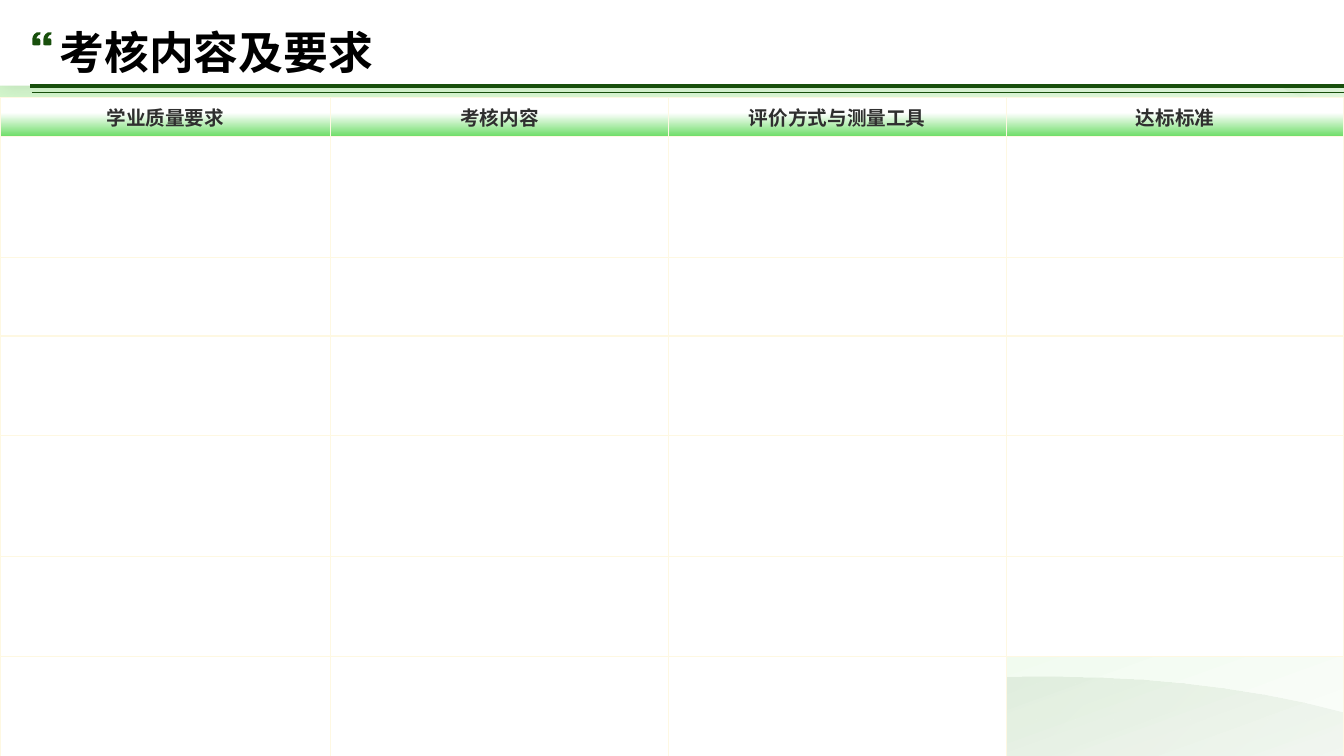
from collections import namedtuple
from itertools import product

from lxml.etree import SubElement
from pptx import Presentation
from pptx.dml.color import RGBColor
from pptx.enum.shapes import MSO_CONNECTOR, MSO_SHAPE
from pptx.enum.text import MSO_ANCHOR, MSO_AUTO_SIZE, PP_ALIGN
from pptx.oxml.ns import qn
from pptx.util import Inches, Pt

Box = namedtuple("Box", "left top width height")
PAGE = Box(0, 0, 13.33, 7.5)
HEADER = Box(0, 0, 13.33, 0.85)
CRITERIA = Box(0, 0.97, 13.33, 6.53)
CJK_FONT = "Noto Sans CJK SC"
DARK_GREEN = "184F0C"
HEADINGS = ["学业质量要求", "考核内容", "评价方式与测量工具", "达标标准"]
COLUMN_WIDTHS = [3.28, 3.35, 3.35, 3.35]
ROW_HEIGHTS = [0.38, 1.2, 0.78, 0.99, 1.2, 0.99, 0.99]
WAVE = [(0, 6.63), (0.09, 6.67), (4.29, 8.08, 8.7, 6.02, 12.93, 6.97),
        (13.33, 7.07), (13.33, 7.5), (0, 7.5)]
CORNER = [(13.33, 0), (13.33, 0.99), (13.26, 1), (12.89, 1.03, 12.53, 0.82, 12.38, 0.46),
          (12.34, 0.35, 12.32, 0.24, 12.32, 0.13), (12.34, 0)]
QUOTE = [(0.06, 0.13), (0.02, 0.13), (0.01, 0.13, 0, 0.13, 0, 0.12), (0, 0.07),
         (0, 0.05, 0.01, 0.03, 0.02, 0.02), (0.03, 0, 0.05, 0, 0.08, 0), (0.08, 0.02),
         (0.06, 0.02, 0.05, 0.04, 0.04, 0.06), (0.06, 0.06), (0.07, 0.06, 0.08, 0.07, 0.08, 0.08),
         (0.08, 0.12), (0.08, 0.13, 0.07, 0.13, 0.06, 0.13)]


def color(value):
    """Turn a hex string into a colour."""
    return RGBColor.from_string(value)


def add_color(parent, value, opacity=100):
    """Add a colour element with its opacity in percent."""
    swatch = SubElement(parent, qn("a:srgbClr"), val=value)
    if opacity < 100:
        SubElement(swatch, qn("a:alpha"), val=str(opacity * 1000))


def paint_gradient(fill, properties, stops, angle):
    """Fill with a linear gradient of (position, colour, opacity) stops."""
    fill.solid()
    solid = properties.find(qn("a:solidFill"))
    gradient = solid.makeelement(qn("a:gradFill"), {"rotWithShape": "1"})
    stop_list = SubElement(gradient, qn("a:gsLst"))
    for position, *shade in stops:
        add_color(SubElement(stop_list, qn("a:gs"), pos=str(position * 1000)), *shade)
    SubElement(gradient, qn("a:lin"), ang=str(angle * 60000), scaled="0")
    properties.replace(solid, gradient)


def place_contour(contour, left, top):
    """Shift a contour and give its segments as lists of points in EMU."""
    return [[(Inches(left + x), Inches(top + y)) for x, y in zip(segment[::2], segment[1::2])]
            for segment in contour]


def add_outline(slide, contours):
    """Draw closed contours of corners and cubic curves as one shape."""
    builder = slide.shapes.build_freeform(*contours[0][0][-1])
    for number, (start, *segments) in enumerate(contours):
        if number:
            builder.move_to(*start[-1])
        builder.add_line_segments([segment[-1] for segment in segments], close=True)
    outline = builder.convert_to_shape()
    outline.shadow.inherit = False
    outline.line.fill.background()
    segments = [segment for contour in contours for segment in contour[1:]]
    for corner, segment in zip(list(outline.element.iter(qn("a:lnTo"))), segments):
        if len(segment) == 3:
            curve = corner.makeelement(qn("a:cubicBezTo"), {})
            for x, y in segment:
                SubElement(curve, qn("a:pt"), x=str(x - outline.left), y=str(y - outline.top))
            corner.getparent().replace(corner, curve)
    return outline


def add_panel(slide, box):
    """Add a plain rectangle over the box."""
    panel = slide.shapes.add_shape(MSO_SHAPE.RECTANGLE, *map(Inches, box))
    panel.shadow.inherit = False
    panel.line.fill.background()
    return panel


def add_backdrop(slide, box):
    """Paint the background, its veils, the wave and the corner."""
    background = slide.background.fill
    background.solid()
    paint_gradient(background, next(slide.element.iter(qn("p:bgPr"))),
                   [(48, "FFFFFF"), (100, "E0F9DB")], 90)
    wave, corner = (place_contour(contour, box.left, box.top) for contour in (WAVE, CORNER))
    layers = [
        (add_panel(slide, box), [(0, "F9FEF8", 80), (100, "E0F9DB", 78)], 90),
        (add_outline(slide, [wave]), [(0, "133F0A"), (100, "237312", 65)], 45),
        (add_outline(slide, [corner]),
         [(0, "237312"), (41, "34AA1A", 47), (82, "34AA1A", 0)], 45),
        (add_panel(slide, box), [(0, "C1F4B6", 67), (100, "FFFFFF", 92)], 70),
    ]
    for layer, stops, angle in layers:
        paint_gradient(layer.fill, layer.element.spPr, stops, angle)


def format_run(run, size, latin, shade):
    """Set a bold run in a Latin font with its Chinese companion."""
    run.font.size, run.font.bold, run.font.name = Pt(size), True, latin
    run.font.color.rgb = color(shade)
    SubElement(run.font._element, qn("a:ea"), typeface=CJK_FONT)


def add_header(slide, box):
    """Build the white title bar with quote mark and double rule."""
    bar = add_panel(slide, box)
    bar.fill.solid()
    bar.fill.fore_color.rgb = color("FFFFFF")
    glow = SubElement(bar.element.spPr.find(qn("a:effectLst")), qn("a:outerShdw"),
                      blurRad=str(Pt(13)), dist="0", dir="0", algn="ctr", rotWithShape="0")
    add_color(glow, "000000", 10)

    title = slide.shapes.title
    slide.shapes.element.append(title.element)
    title.left, title.top = Inches(box.left + 0.59), Inches(box.top + 0.25)
    title.width, title.height = Inches(12.17), Inches(0.47)
    frame = title.text_frame
    frame.text = "考核内容及要求"
    frame.auto_size = MSO_AUTO_SIZE.NONE
    frame.vertical_anchor = MSO_ANCHOR.MIDDLE
    frame.margin_left = frame.margin_right = frame.margin_top = frame.margin_bottom = 0
    heading = frame.paragraphs[0]
    heading.alignment, heading.line_spacing = PP_ALIGN.LEFT, 1.1
    format_run(heading.runs[0], 32, CJK_FONT, "000000")

    margin = box.left + 0.32
    quotes = add_outline(slide, [place_contour(QUOTE, margin + shift, box.top + 0.32)
                                 for shift in (0, 0.11)])
    quotes.fill.solid()
    quotes.fill.fore_color.rgb = color(DARK_GREEN)
    bottom = box.top + box.height
    for y, weight, cap in ((bottom, 3, "sq"), (bottom + 0.07, 0.75, "flat")):
        rule = slide.shapes.add_connector(MSO_CONNECTOR.STRAIGHT, Inches(margin), Inches(y),
                                          Inches(box.left + box.width), Inches(y))
        rule.line.width = Pt(weight)
        rule.line.color.rgb = color(DARK_GREEN)
        rule._element.spPr.find(qn("a:ln")).set("cap", cap)
        SubElement(rule._element.spPr, qn("a:effectLst"))


def add_borders(properties):
    """Give a cell a thin cream border on every side."""
    for place, side in enumerate(("a:lnL", "a:lnR", "a:lnT", "a:lnB")):
        border = properties.makeelement(qn(side), {"w": str(Pt(1))})
        add_color(SubElement(border, qn("a:solidFill")), "FEF8E2")
        properties.insert(place, border)


def add_criteria(slide, box):
    """Build the assessment table with its gradient heading row."""
    rows, columns = len(ROW_HEIGHTS), len(COLUMN_WIDTHS)
    criteria = slide.shapes.add_table(rows, columns, *map(Inches, box)).table
    criteria.first_row = criteria.horz_banding = False
    for column, width in zip(criteria.columns, COLUMN_WIDTHS):
        column.width = Inches(width)
    for row, height in zip(criteria.rows, ROW_HEIGHTS):
        row.height = Inches(height)
    for row, column in product(range(rows), range(columns)):
        cell = criteria.cell(row, column)
        properties = cell._tc.get_or_add_tcPr()
        if row == 0:
            cell.text_frame.text = HEADINGS[column]
            cell.vertical_anchor = MSO_ANCHOR.MIDDLE
            cell.margin_left = cell.margin_right = Inches(0.05)
            cell.margin_top = cell.margin_bottom = Inches(0.05)
            heading = cell.text_frame.paragraphs[0]
            heading.alignment = PP_ALIGN.CENTER
            format_run(heading.runs[0], 14, "Lato", "2F2F2F")
            paint_gradient(cell.fill, properties, [(0, "6DDD67"), (61, "FFFFFF")], 270)
        elif (row, column) == (rows - 1, columns - 1):
            cell.fill.background()
        else:
            cell.fill.solid()
            cell.fill.fore_color.rgb = color("FFFFFF")
        add_borders(properties)


def main():
    """Build and save the assessment slide."""
    deck = Presentation()
    deck.slide_width, deck.slide_height = Inches(PAGE.width), Inches(PAGE.height)
    slide = deck.slides.add_slide(deck.slide_layouts[5])
    add_backdrop(slide, PAGE)
    add_header(slide, HEADER)
    add_criteria(slide, CRITERIA)
    deck.save("out.pptx")


if __name__ == "__main__":
    main()
